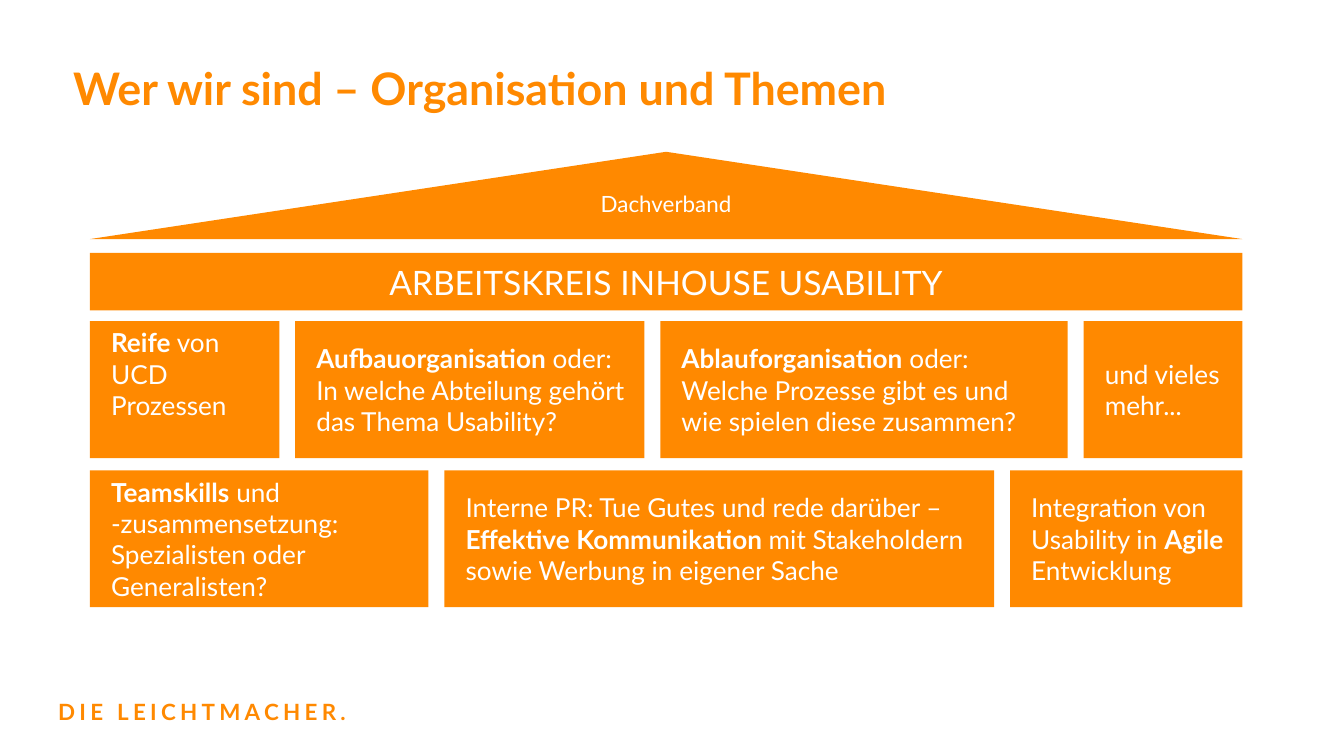
"""Build the slide that shows the working group and its themes as a house."""
from pptx import Presentation
from pptx.dml.color import RGBColor
from pptx.enum.shapes import MSO_SHAPE
from pptx.enum.text import MSO_ANCHOR, PP_ALIGN
from pptx.util import Cm, Pt

RECTANGLE = MSO_SHAPE.RECTANGLE
TRIANGLE = MSO_SHAPE.ISOSCELES_TRIANGLE
LEFT, CENTER = PP_ALIGN.LEFT, PP_ALIGN.CENTER
TOP, MIDDLE = MSO_ANCHOR.TOP, MSO_ANCHOR.MIDDLE

HOUSE_LEFT, HOUSE_WIDTH = 1.7, 21.78
STONE_TOP, STONE_HEIGHT = 6.07, 2.59
STONE_GAP, ROW_GAP = 0.3, 0.23
LINE_HEIGHT = 0.6

STONE_ROWS = [
    [
        (3.58, "**Reife** von UCD Prozessen", LINE_HEIGHT),
        (6.6, "**Aufbauorganisation **oder: \nIn welche Abteilung gehört das Thema Usability?", 0),
        (7.7, "**Ablauforganisation** oder:\nWelche Prozesse gibt es und wie spielen diese zusammen?", 0),
        (3.0, "und vieles mehr...", 0),
    ],
    [
        (6.4, "**Teamskills** und -zusammensetzung: Spezialisten oder Generalisten?", 0),
        (10.39, "Interne PR: Tue Gutes und rede darüber – **Effektive Kommunikation **"
                "mit Stakeholdern sowie Werbung in eigener Sache", 0),
        (4.39, "Integration von Usability in **Agile** Entwicklung", 0),
    ],
]


def color(value):
    return RGBColor.from_string(value)


def write(frame, text, size=14, ink="FFFFFF", font="Lato", bold=False, align=LEFT,
          anchor=MIDDLE, insets=(0.25, 0.13, 0.25, 0.13), tracking=0):
    """Fill a text frame, with **double stars** around bold words."""
    frame.word_wrap = True
    frame.vertical_anchor = anchor
    (frame.margin_left, frame.margin_top,
     frame.margin_right, frame.margin_bottom) = map(Cm, insets)
    para = frame.paragraphs[0]
    para.alignment = align
    for index, part in enumerate(text.split("**")):
        for number, line in enumerate(part.split("\n")):
            if number:
                para.add_line_break()
            if not line:
                continue
            span = para.add_run()
            span.text = line
            span.font.name = font
            span.font.size = Pt(size)
            span.font.bold = bold or index % 2 == 1
            span.font.color.rgb = color(ink)
            if tracking:
                span.font._element.set("spc", str(round(tracking * 100)))


class HousePage:
    """Hold the accent colour and the current slide."""

    def __init__(self, deck, accent="FF8900"):
        self.accent = accent
        self.page = deck.slides.add_slide(deck.slide_layouts[5])

    def title(self, text, left, top, width, height):
        box = self.page.shapes.title
        box.left, box.top, box.width, box.height = map(Cm, (left, top, width, height))
        write(box.text_frame, text, size=24, ink=self.accent, bold=True)

    def label(self, text, left, top, width, height, **style):
        box = self.page.shapes.add_textbox(*map(Cm, (left, top, width, height)))
        write(box.text_frame, text, ink=self.accent, **style)

    def block(self, kind, text, left, top, width, height, **style):
        box = self.page.shapes.add_shape(kind, *map(Cm, (left, top, width, height)))
        box.shadow.inherit = False
        box.fill.solid()
        box.fill.fore_color.rgb = color(self.accent)
        box.line.fill.background()
        write(box.text_frame, text, **style)

    def stone_row(self, stones, top):
        left = HOUSE_LEFT
        for width, text, lift in stones:
            self.block(RECTANGLE, text, left, top, width, STONE_HEIGHT,
                       insets=(0.4, 0.13, 0.25, 0.13 + lift))
            left += width + STONE_GAP


def main():
    deck = Presentation()
    deck.slide_width, deck.slide_height = Cm(25.4), Cm(14.29)
    house = HousePage(deck)
    house.label("DIE LEICHTMACHER.", 0.85, 12.95, 7.87, 1.04, size=12, bold=True,
                anchor=TOP, insets=(0.25,) * 4, tracking=2.3)
    house.title("Wer wir sind – Organisation und Themen", 1.13, 0.9, 23.13, 1.52)
    house.block(TRIANGLE, "Dachverband", HOUSE_LEFT, 2.87, HOUSE_WIDTH, 1.65,
                size=12, align=CENTER, insets=(0.25, 0.13, 0.25, 0.63))
    house.block(RECTANGLE, "ARBEITSKREIS INHOUSE USABILITY", HOUSE_LEFT, 4.78,
                HOUSE_WIDTH, 1.09, size=18, align=CENTER)
    for number, stones in enumerate(STONE_ROWS):
        house.stone_row(stones, STONE_TOP + number * (STONE_HEIGHT + ROW_GAP))
    deck.save("out.pptx")


if __name__ == "__main__":
    main()
